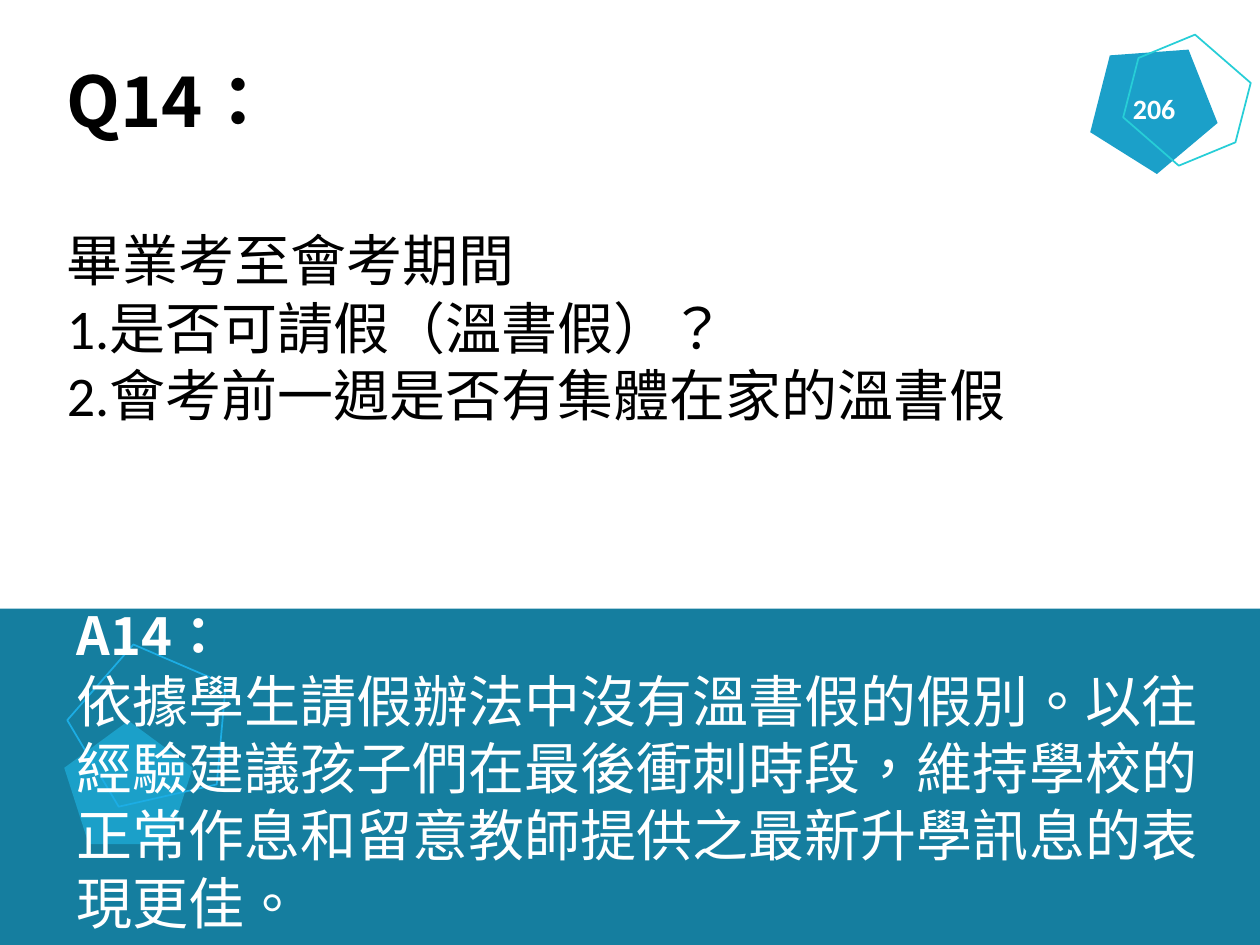
from pptx import Presentation
from pptx.dml.color import RGBColor
from pptx.enum.lang import MSO_LANGUAGE_ID as Language
from pptx.enum.shapes import MSO_SHAPE as Shape
from pptx.enum.text import MSO_ANCHOR as Anchor, MSO_AUTO_SIZE as AutoSize, PP_ALIGN as Align
from pptx.util import Inches, Pt

COLORS = {
    "band": "157E9F",
    "pentagon": "1BA0C9",
    "pentagon_line": "1CADE4",
    "hexagon_line": "27CED7",
    "dark": "000000",
    "light": "FFFFFF",
}
HEADING_FONT = "Noto Sans CJK SC"
BODY_FONT = "Calibri"
COLUMNS, ROWS = 100, 75


class SlideBuilder:
    def __init__(self, presentation):
        self.column = presentation.slide_width / COLUMNS
        self.row = presentation.slide_height / ROWS
        self.slide = presentation.slides.add_slide(presentation.slide_layouts[5])

    def box(self, left, top, width, height):
        return [int(length) for length in (
            left * self.column, top * self.row, width * self.column, height * self.row)]

    def color(self, name):
        return RGBColor.from_string(COLORS[name])

    def shape(self, kind, area, fill=None, line=None, rotation=0):
        shape = self.slide.shapes.add_shape(kind, *self.box(*area))
        shape.shadow.inherit = False
        shape.rotation = rotation
        if fill:
            shape.fill.solid()
            shape.fill.fore_color.rgb = self.color(fill)
        else:
            shape.fill.background()
        if line:
            shape.line.color.rgb = self.color(line)
            shape.line.width = Pt(1)
        else:
            shape.line.fill.background()

    def fill_frame(self, shape, lines, color, wrap=True):
        frame = shape.text_frame
        frame.text = "\n".join(text for text, *_ in lines)
        frame.word_wrap = wrap
        frame.auto_size = AutoSize.SHAPE_TO_FIT_TEXT
        frame.vertical_anchor = Anchor.TOP
        for paragraph, (_, font_name, size, bold, align, gap) in zip(frame.paragraphs, lines):
            paragraph.alignment = align
            paragraph.space_after = Pt(gap)
            for run in paragraph.runs:
                run.font.name = font_name
                run.font.size = Pt(size)
                run.font.bold = bold
                run.font.color.rgb = self.color(color)
                run.font.language_id = Language.TRADITIONAL_CHINESE

    def title(self, area, lines, color):
        title = self.slide.shapes.title
        title.left, title.top, title.width, title.height = self.box(*area)
        self.fill_frame(title, lines, color)

    def text(self, area, lines, color, wrap=True):
        text_box = self.slide.shapes.add_textbox(*self.box(*area))
        self.fill_frame(text_box, lines, color, wrap)


def main():
    presentation = Presentation()
    presentation.slide_width, presentation.slide_height = Inches(10), Inches(7.5)
    builder = SlideBuilder(presentation)

    builder.shape(Shape.RECTANGLE, (0, 48.3, COLUMNS, 26.7), fill="band")
    builder.shape(Shape.REGULAR_PENTAGON, (86.7, 3.2, 10.1, 9.7), fill="pentagon", rotation=32.1)
    builder.shape(Shape.REGULAR_PENTAGON, (5.1, 57.2, 10.2, 9.8), fill="pentagon")
    builder.shape(Shape.REGULAR_PENTAGON, (5.5, 51, 12.9, 12.3), line="pentagon_line", rotation=347.2)
    builder.shape(Shape.HEXAGON, (89.1, 3.6, 10.2, 8.7), line="hexagon_line", rotation=41)

    builder.title((4.3, 4.1, 83.3, 30.6), [
        ("Q14：", HEADING_FONT, 40, True, Align.LEFT, 48),
        ("畢業考至會考期間", BODY_FONT, 32, False, Align.JUSTIFY, 0),
        ("1.是否可請假（溫書假）？", BODY_FONT, 32, False, Align.JUSTIFY, 0),
        ("2.會考前一週是否有集體在家的溫書假", BODY_FONT, 32, False, Align.LEFT, 0),
    ], "dark")
    builder.text((5.1, 47.4, 92.9, 27.6), [
        ("A14：", HEADING_FONT, 30, True, Align.LEFT, 0),
        ("依據學生請假辦法中沒有溫書假的假別。以往經驗建議孩子們在最後衝刺時段，"
         "維持學校的正常作息和留意教師提供之最新升學訊息的表現更佳。",
         BODY_FONT, 32, False, Align.LEFT, 0),
    ], "light")
    builder.text((88.9, 6.8, 5.4, 3.7), [
        ("206", BODY_FONT, 16, True, Align.CENTER, 0),
    ], "light", wrap=False)

    presentation.save("out.pptx")


if __name__ == "__main__":
    main()
